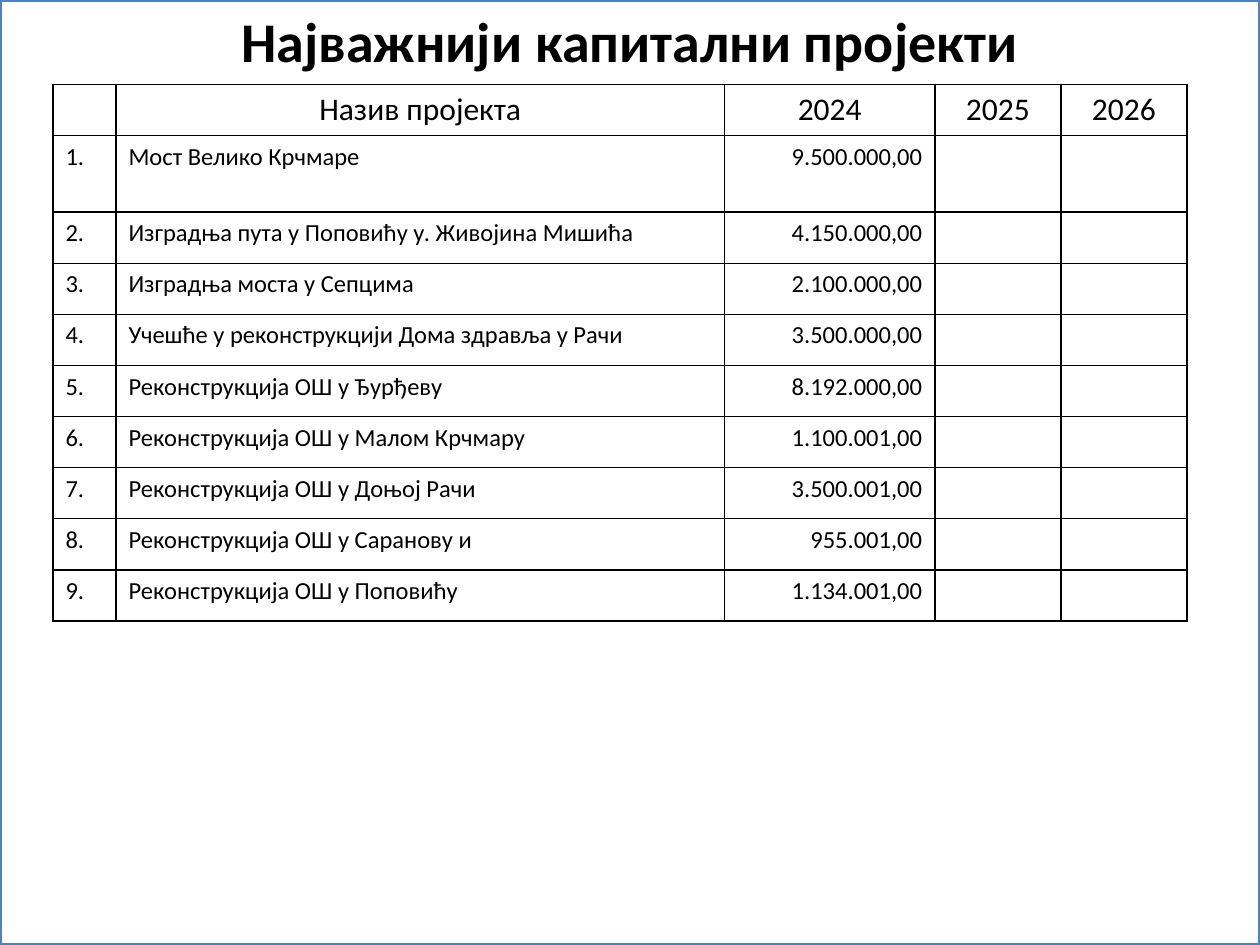
from dataclasses import dataclass

from lxml import etree
from pptx import Presentation
from pptx import util as u
from pptx.dml.color import RGBColor
from pptx.enum import text
from pptx.oxml import ns


@dataclass(frozen=True)
class Theme:
    """Colours, font and type sizes of the slide."""
    ink: str = "000000"
    paper: str = "FFFFFF"
    frame: str = "4F81BD"
    font: str = "Calibri"
    title_size: int = 32
    header_size: int = 18
    body_size: int = 14
    rule_width: int = 1
    frame_width: int = 2


THEME = Theme()
ALIGN = text.PP_ALIGN
HEADER = ["", "Назив пројекта", "2024", "2025", "2026"]
PROJECTS = [
    ("Мост Велико Крчмаре", "9.500.000,00"),
    ("Изградња пута у Поповићу у. Живојина Мишића", "4.150.000,00"),
    ("Изградња моста у Сепцима", "2.100.000,00"),
    ("Учешће у реконструкцији Дома здравља у Рачи", "3.500.000,00"),
    ("Реконструкција ОШ у Ђурђеву", "8.192.000,00"),
    ("Реконструкција ОШ у Малом Крчмару", "1.100.001,00"),
    ("Реконструкција ОШ у Доњој Рачи", "3.500.001,00"),
    ("Реконструкција ОШ у Саранову и", "955.001,00"),
    ("Реконструкција ОШ у Поповићу", "1.134.001,00"),
]
TABLE_BOX = (0.42, 0.67, 9, 4.26)
COLUMN_WIDTHS = [0.5, 4.83, 1.67, 1, 1]
ROW_SHARES = [1, 1.5] + [1] * (len(PROJECTS) - 1)
BODY_ALIGNMENTS = [ALIGN.LEFT, ALIGN.LEFT, ALIGN.RIGHT, ALIGN.LEFT, ALIGN.LEFT]


def write_text(frame, words, size, align=ALIGN.LEFT, bold=False):
    """Fill the first paragraph of a text frame with formatted words."""
    paragraph = frame.paragraphs[0]
    paragraph.alignment = align
    font = paragraph.font
    if words:
        run = paragraph.add_run()
        run.text = words
        font = run.font
    font.name = THEME.font
    font.size = u.Pt(size)
    font.bold = bold
    font.color.rgb = RGBColor.from_string(THEME.ink)


def add_title(presentation, slide, words):
    """Stretch the title placeholder into a framed, full-slide panel."""
    shape = slide.shapes.title
    shape.left, shape.top = 0, 0
    shape.width, shape.height = presentation.slide_width, presentation.slide_height
    shape.fill.solid()
    shape.fill.fore_color.rgb = RGBColor.from_string(THEME.paper)
    shape.line.color.rgb = RGBColor.from_string(THEME.frame)
    shape.line.width = u.Pt(THEME.frame_width)
    frame = shape.text_frame
    frame.auto_size = text.MSO_AUTO_SIZE.NONE
    frame.vertical_anchor = text.MSO_ANCHOR.TOP
    write_text(frame, words, THEME.title_size, align=ALIGN.CENTER, bold=True)


def rule_cell(cell):
    """Draw solid borders on all four sides of a cell."""
    properties = cell._tc.get_or_add_tcPr()
    for position, side in enumerate(("a:lnL", "a:lnR", "a:lnT", "a:lnB")):
        line = etree.Element(ns.qn(side), w=str(u.Pt(THEME.rule_width)))
        fill = etree.SubElement(line, ns.qn("a:solidFill"))
        etree.SubElement(fill, ns.qn("a:srgbClr"), val=THEME.ink)
        properties.insert(position, line)


def fill_row(row, values, size, alignments):
    """Write and format the cells of one table row."""
    for cell, value, align in zip(row.cells, values, alignments):
        cell.fill.background()
        rule_cell(cell)
        write_text(cell.text_frame, value, size, align=align)


def add_project_table(slide):
    """Add the table of numbered projects and yearly amounts."""
    left, top, width, height = (u.Inches(length) for length in TABLE_BOX)
    table = slide.shapes.add_table(
        len(ROW_SHARES), len(HEADER), left, top, width, height).table
    table.first_row = table.horz_banding = False
    for column, inches in zip(table.columns, COLUMN_WIDTHS):
        column.width = u.Inches(inches)
    for row, share in zip(table.rows, ROW_SHARES):
        row.height = int(height * share / sum(ROW_SHARES))
    fill_row(table.rows[0], HEADER, THEME.header_size, [ALIGN.CENTER] * len(HEADER))
    for number, (name, amount) in enumerate(PROJECTS, start=1):
        values = [f"{number}.", name, amount, "", ""]
        fill_row(table.rows[number], values, THEME.body_size, BODY_ALIGNMENTS)


def main():
    """Build the slide and save it."""
    presentation = Presentation()
    presentation.slide_width, presentation.slide_height = u.Inches(10), u.Inches(7.5)
    title_only = presentation.slide_layouts.get_by_name("Title Only")
    slide = presentation.slides.add_slide(title_only)
    add_title(presentation, slide, "Најважнији капитални пројекти")
    add_project_table(slide)
    presentation.save("out.pptx")


if __name__ == "__main__":
    main()
